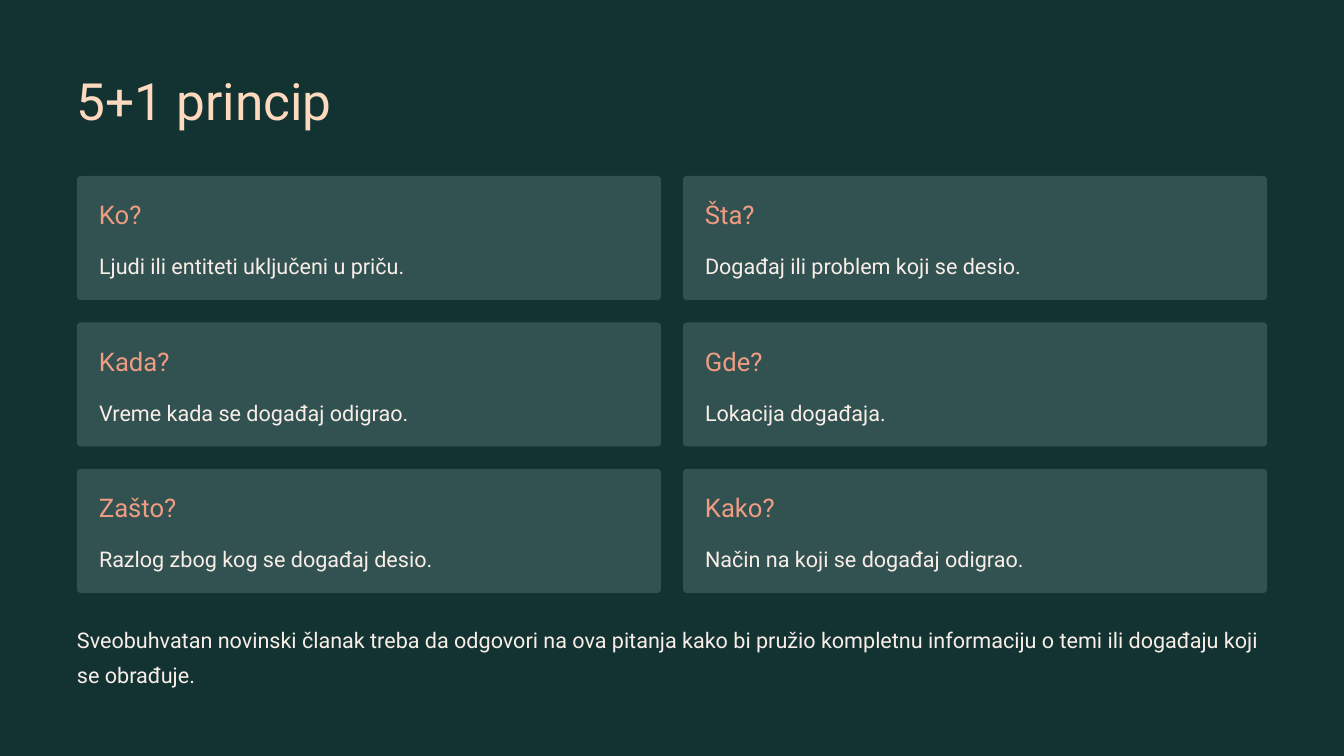
from pptx import Presentation
from pptx import util as u
from pptx.dml.color import RGBColor
from pptx.enum import shapes, text

# Content
TITLE = "5+1 princip"
CARDS = [
    ("Ko?", "Ljudi ili entiteti uključeni u priču."),
    ("Šta?", "Događaj ili problem koji se desio."),
    ("Kada?", "Vreme kada se događaj odigrao."),
    ("Gde?", "Lokacija događaja."),
    ("Zašto?", "Razlog zbog kog se događaj desio."),
    ("Kako?", "Način na koji se događaj odigrao."),
]
SUMMARY = ("Sveobuhvatan novinski članak treba da odgovori na ova pitanja kako bi "
           "pružio kompletnu informaciju o temi ili događaju koji se obrađuje.")

# Style: size, line spacing in points, colour
COLORS = {"ground": "123332", "card": "315251", "title": "FFD9BE",
          "question": "EF9C82", "body": "F9EEE7"}
STYLES = {"title": (44, 55), "question": (22, 27.5), "body": (18.5, 30)}
FONT = "Roboto"

# Layout in px
SCALE = u.Inches(1) / 84
WIDTH, HEIGHT = 1344, 756
MARGIN, PAD, GAP = 77, 22, 22
COLUMNS = 2
CONTENT_W = WIDTH - 2 * MARGIN
CARD_W, CARD_H = (CONTENT_W - GAP) / COLUMNS, 124
GRID_TOP, GRID_BOTTOM = 176, 593
ROWS = len(CARDS) // COLUMNS
ROW_STEP = (GRID_BOTTOM - GRID_TOP - CARD_H) / (ROWS - 1)


def px(*lengths):
    return [round(length * SCALE) for length in lengths]


def color(name):
    return RGBColor.from_string(COLORS[name])


def add_text(page, words, style, left, top, width, height, wrap=False):
    box = page.shapes.add_textbox(*px(left, top, width, height))
    frame = box.text_frame
    frame.margin_left = frame.margin_right = frame.margin_top = frame.margin_bottom = 0
    frame.word_wrap = wrap
    frame.vertical_anchor = text.MSO_ANCHOR.TOP
    size, spacing = STYLES[style]
    para = frame.paragraphs[0]
    para.alignment = text.PP_ALIGN.LEFT
    para.line_spacing = u.Pt(spacing)
    span = para.add_run()
    span.text = words
    span.font.name = FONT
    span.font.size = u.Pt(size)
    span.font.color.rgb = color(style)


def add_card(page, question, answer, left, top):
    card = page.shapes.add_shape(shapes.MSO_SHAPE.ROUNDED_RECTANGLE,
                                 *px(left, top, CARD_W, CARD_H))
    card.adjustments[0] = 0.03
    card.shadow.inherit = False
    card.fill.solid()
    card.fill.fore_color.rgb = color("card")
    card.line.fill.background()
    add_text(page, question, "question", left + PAD, top + 22, 259, 32)
    add_text(page, answer, "body", left + PAD, top + 68, CARD_W - 2 * PAD, 35)


def main():
    deck = Presentation()
    deck.slide_width, deck.slide_height = px(WIDTH, HEIGHT)
    page = deck.slides.add_slide(deck.slide_layouts[6])
    page.background.fill.solid()
    page.background.fill.fore_color.rgb = color("ground")

    # Title
    add_text(page, TITLE, "title", MARGIN, 67, 517, 65)

    # Grid of questions
    for index, (question, answer) in enumerate(CARDS):
        row, column = divmod(index, COLUMNS)
        add_card(page, question, answer,
                 MARGIN + column * (CARD_W + GAP), GRID_TOP + row * ROW_STEP)

    # Summary
    add_text(page, SUMMARY, "body", MARGIN, 618, CONTENT_W, 71, wrap=True)

    deck.save("out.pptx")


if __name__ == "__main__":
    main()
